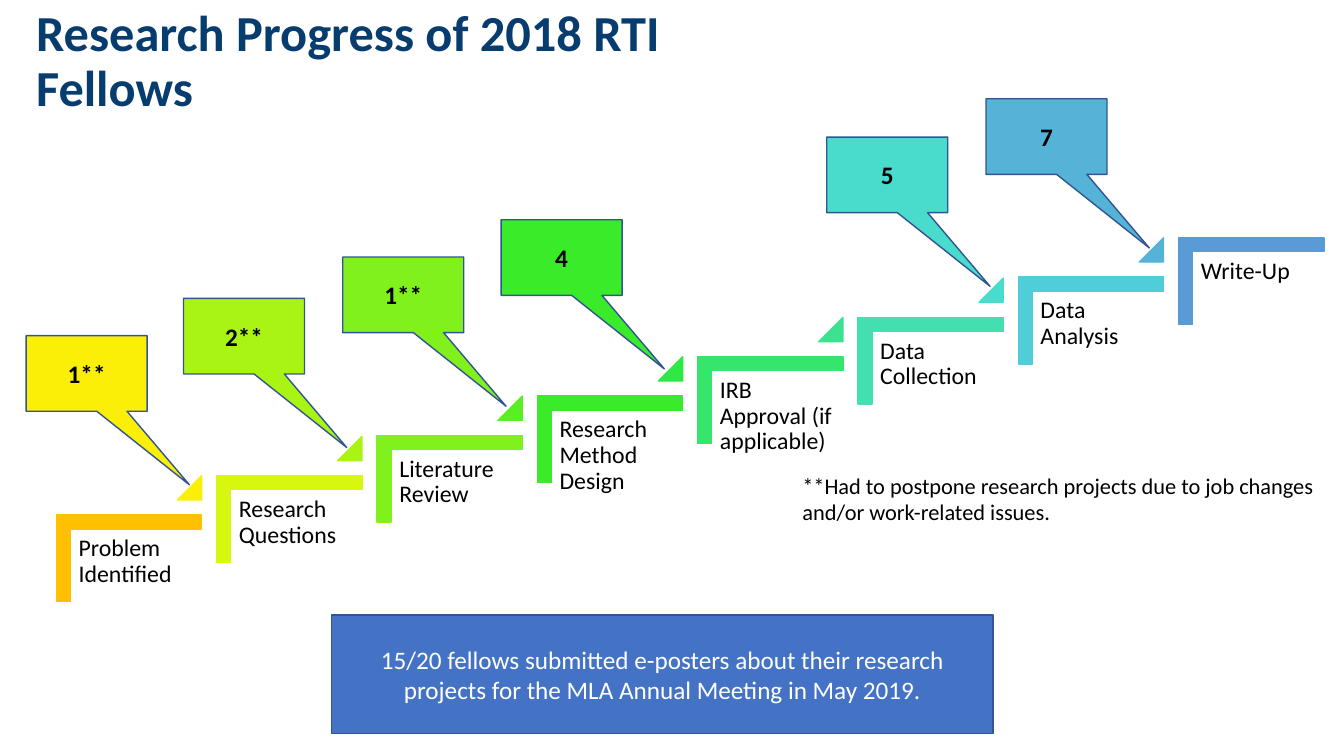
from dataclasses import dataclass

from pptx import Presentation
from pptx.dml.color import RGBColor
from pptx.enum.shapes import MSO_SHAPE
from pptx.enum.text import MSO_ANCHOR, PP_ALIGN
from pptx.util import Emu, Pt

CORNER = MSO_SHAPE.CORNER
TRIANGLE = MSO_SHAPE.ISOSCELES_TRIANGLE
CALLOUT = MSO_SHAPE.RECTANGULAR_CALLOUT
RECTANGLE = MSO_SHAPE.RECTANGLE
TOP, MIDDLE, BOTTOM = MSO_ANCHOR.TOP, MSO_ANCHOR.MIDDLE, MSO_ANCHOR.BOTTOM
LEFT, CENTER = PP_ALIGN.LEFT, PP_ALIGN.CENTER

EMU_PER_PX = 9144
BLANK_LAYOUT = 6


@dataclass(frozen=True)
class Theme:
    """Colours, font and type sizes of the slide."""
    font: str = "Calibri"
    navy: str = "073C6E"
    black: str = "000000"
    white: str = "FFFFFF"
    banner: str = "4472C4"
    outline: str = "325491"
    steps: tuple = ("FFC000", "D7F80E", "80F11C", "39EB29",
                    "36E56C", "43DFB0", "4FCEDA", "5B9BD5")
    rises: tuple = ("FBEE07", "A9F415", "5BEE23", "30E845",
                    "3DE290", "49DCCC", "55B3D7")
    title_size: int = 36
    label_size: int = 17
    note_size: int = 16
    body_size: int = 18


def px(length):
    """Turn whole px into EMU."""
    return Emu(length * EMU_PER_PX)


class SlideBuilder:
    """Draws styled elements on the current slide."""

    def __init__(self, slide, theme):
        """Keep the slide and its theme."""
        self.slide = slide
        self.theme = theme

    def add_wording(self, shape, wording, size, color, bold=False, align=LEFT,
                    anchor=TOP, spacing=None, inset=None):
        """Put one styled run into a shape."""
        frame = shape.text_frame
        frame.word_wrap = True
        frame.vertical_anchor = anchor
        if inset is not None:
            frame.margin_left = frame.margin_right = px(inset)
            frame.margin_top = frame.margin_bottom = px(inset)
        paragraph = frame.paragraphs[0]
        paragraph.alignment = align
        paragraph.line_spacing = spacing
        run = paragraph.add_run()
        run.text = wording
        run.font.name = self.theme.font
        run.font.size = Pt(size)
        run.font.bold = bold
        run.font.color.rgb = RGBColor.from_string(color)

    def text(self, box, wording, size, color, **style):
        """Add a wrapped text box."""
        frame_box = self.slide.shapes.add_textbox(*map(px, box))
        self.add_wording(frame_box, wording, size, color, **style)

    def shape(self, kind, box, fill, line, adjustments=()):
        """Add a filled, outlined preset shape."""
        preset = self.slide.shapes.add_shape(kind, *map(px, box))
        preset.shadow.inherit = False
        preset.fill.solid()
        preset.fill.fore_color.rgb = RGBColor.from_string(fill)
        preset.line.color.rgb = RGBColor.from_string(line)
        preset.line.width = Pt(1)
        for index, value in enumerate(adjustments):
            preset.adjustments[index] = value
        return preset

    def step(self, left, top, label, color):
        """Add a stair step with its label."""
        tread = self.shape(CORNER, (left, top, 86, 144), color, color, (0.161, 0.161))
        tread.rotation = 90
        self.text((left - 14, top + 43, 130, 114), label, self.theme.label_size,
                  self.theme.black, spacing=0.9, inset=7)

    def rise(self, left, top, color):
        """Add the triangle that leads to the next step."""
        self.shape(TRIANGLE, (left, top, 24, 24), color, color, (1,))

    def callout(self, left, top, count, color):
        """Add a callout with a count of fellows."""
        bubble = self.shape(CALLOUT, (left, top, 120, 75), color,
                            self.theme.outline, (0.85, 1.474))
        self.add_wording(bubble, count, self.theme.body_size, self.theme.black,
                         bold=True, align=CENTER, anchor=MIDDLE)

    def banner(self, box, wording):
        """Add the summary banner."""
        panel = self.shape(RECTANGLE, box, self.theme.banner, self.theme.outline)
        self.add_wording(panel, wording, self.theme.body_size, self.theme.white,
                         align=CENTER, anchor=MIDDLE)


STAGES = ("Problem Identified", "Research Questions", "Literature Review",
          "Research Method Design", "IRB Approval (if applicable)",
          "Data Collection", "Data Analysis", "Write-Up")
STEP_LEFT, STEP_TOP, STEP_RUN, STAIR_HEIGHT = 85, 482, 159, 275


def main():
    """Build and save the slide."""
    deck = Presentation()
    deck.slide_width, deck.slide_height = px(1333), px(750)
    theme = Theme()
    slide = deck.slides.add_slide(deck.slide_layouts[BLANK_LAYOUT])
    builder = SlideBuilder(slide, theme)

    builder.text((26, 15, 785, 106), "Research Progress of 2018 RTI Fellows",
                 theme.title_size, theme.navy, bold=True, anchor=BOTTOM, spacing=0.9)

    for index, (stage, color) in enumerate(zip(STAGES, theme.steps)):
        left = STEP_LEFT + index * STEP_RUN
        top = STEP_TOP - round(index * STAIR_HEIGHT / (len(STAGES) - 1))
        builder.step(left, top, stage, color)
        if index < len(theme.rises):
            builder.rise(left + 91, top - 10, theme.rises[index])

    builder.text((786, 463, 567, 118),
                 "**Had to postpone research projects due to job changes "
                 "and/or work-related issues.", theme.note_size, theme.black)

    fellow_counts = (
        (26, 333, "1**", theme.rises[0]),
        (182, 296, "2**", theme.rises[1]),
        (340, 255, "1**", theme.steps[2]),
        (497, 218, "4", theme.steps[3]),
        (820, 136, "5", theme.rises[5]),
        (978, 98, "7", theme.rises[6]),
    )
    for left, top, count, color in fellow_counts:
        builder.callout(left, top, count, color)

    builder.banner((329, 610, 656, 118),
                   "15/20 fellows submitted e-posters about their research "
                   "projects for the MLA Annual Meeting in May 2019.")
    deck.save("out.pptx")


if __name__ == "__main__":
    main()
